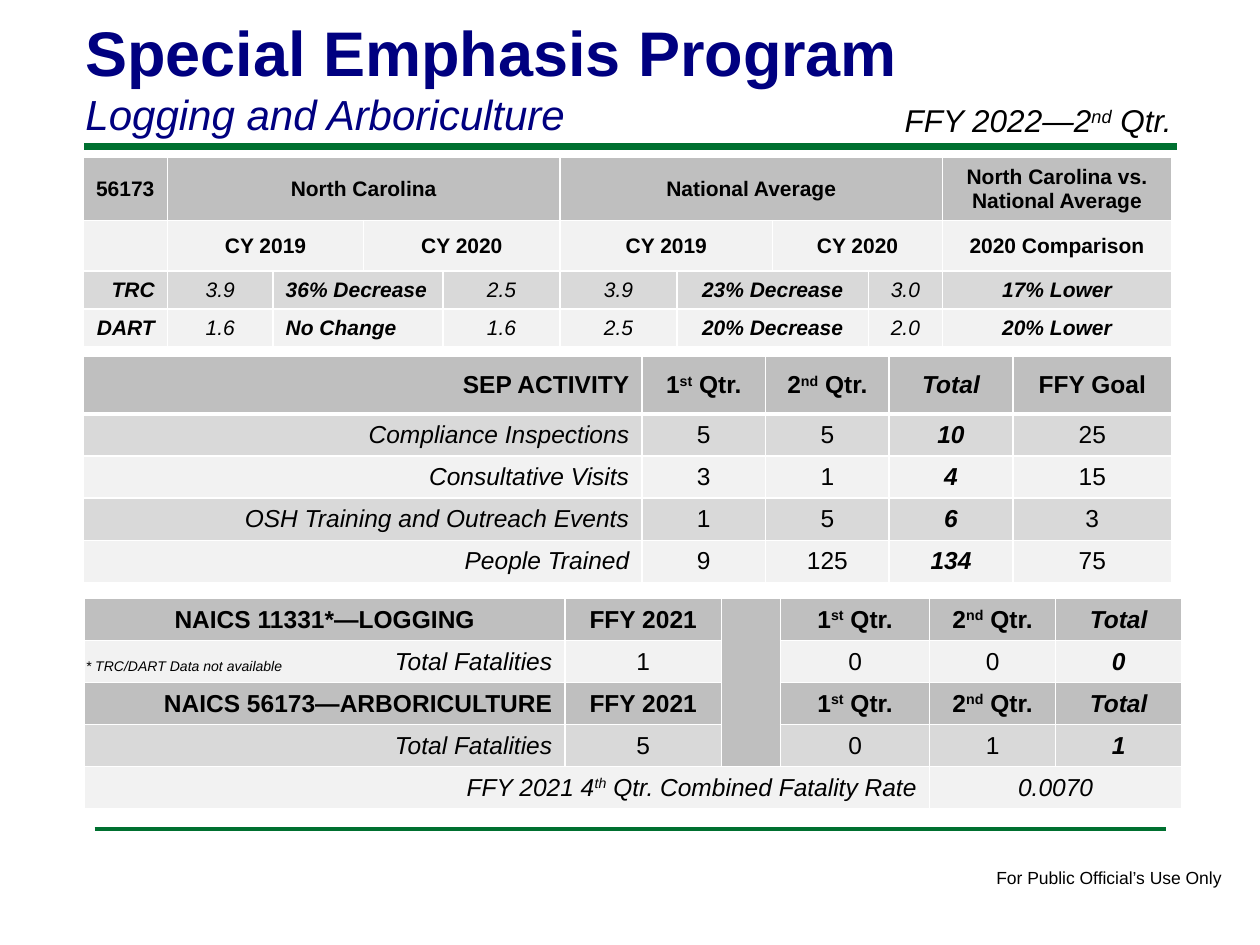
from collections import namedtuple
from lxml.etree import SubElement
from pptx import Presentation
from pptx.dml.color import RGBColor
from pptx.enum.shapes import MSO_CONNECTOR as Connector
from pptx.enum.text import MSO_ANCHOR as Anchor, PP_ALIGN as Align
from pptx.oxml.ns import qn
from pptx.util import Inches, Pt

Box = namedtuple("Box", "left top width height")
Entry = namedtuple("Entry", "text style down across", defaults=("", "c", 1, 1))
WIDTH, HEIGHT = Inches(10), Inches(7.5)
FONT = "Arial"
BLACK, WHITE, NAVY, GREEN = "000000", "FFFFFF", "000080", "007030"
HEAD, DARK, LIGHT = "BFBFBF", "D9D9D9", "F2F2F2"
ALIGNMENTS = {"l": Align.LEFT, "c": Align.CENTER, "r": Align.RIGHT}
QUARTERS = ("1^st^ Qtr.", "2^nd^ Qtr.")


def color(value):
    return RGBColor.from_string(value)


def percent_box(left, top, width, height):
    return Box(*(int(share * side / 100) for share, side in
                 zip((left, top, width, height), (WIDTH, HEIGHT) * 2)))


def inside(box, left, top, width, height):
    return Box(int(box.left + box.width * left), int(box.top + box.height * top),
               int(box.width * width), int(box.height * height))


def write(paragraph, text, style, size, ink=BLACK):
    paragraph.alignment = ALIGNMENTS[style[-1]]
    formats = {"name": FONT, "size": Pt(size), "bold": "b" in style, "italic": "i" in style}
    for index, part in enumerate(text.split("^") if text else ()):
        run = paragraph.add_run()
        run.text = part
        for name, value in formats.items():
            setattr(run.font, name, value)
        run.font.color.rgb = color(ink)
        if index % 2:
            run._r.get_or_add_rPr().set("baseline", "30000")
    if not text:
        SubElement(paragraph._p, qn("a:endParaRPr"), sz=str(size * 100))


def add_text(slide, box, lines, ink=BLACK, wrap=True, anchor=Anchor.TOP):
    frame = slide.shapes.add_textbox(*box).text_frame
    frame.word_wrap = wrap
    frame.vertical_anchor = anchor
    for index, (text, style, size) in enumerate(lines):
        paragraph = frame.add_paragraph() if index else frame.paragraphs[0]
        write(paragraph, text, style, size, ink)


def add_rule(slide, box, weight):
    line = slide.shapes.add_connector(Connector.STRAIGHT, box.left, box.top,
                                      box.left + box.width, box.top)
    line.line.color.rgb = color(GREEN)
    line.line.width = Pt(weight)
    SubElement(line._element.spPr, qn("a:effectLst"))


def set_borders(cell, bottom):
    properties = cell._tc.get_or_add_tcPr()
    weights = {"lnL": 1, "lnR": 1, "lnT": 1, "lnB": bottom}
    for position, (side, weight) in enumerate(weights.items()):
        border = SubElement(properties, qn(f"a:{side}"), w=str(Pt(weight)))
        fill = SubElement(border, qn("a:solidFill"))
        SubElement(fill, qn("a:srgbClr"), val=WHITE)
        properties.insert(position, border)


def add_grid(slide, box, columns, rows, fills, content, size, head_border=1):
    table = slide.shapes.add_table(len(rows), len(columns), *box).table
    for name in ("first_row", "horz_banding"):
        setattr(table, name, False)
    for tracks, shares, name, length in ((table.columns, columns, "width", box.width),
                                         (table.rows, rows, "height", box.height)):
        for track, share in zip(tracks, shares):
            setattr(track, name, int(length * share / sum(shares)))
    for row, fill in enumerate(fills):
        for column in range(len(columns)):
            cell = table.cell(row, column)
            entry = content.get((row, column), Entry())
            cell.fill.solid()
            cell.fill.fore_color.rgb = color(HEAD if entry.down > 1 else fill)
            set_borders(cell, 1 if row else head_border)
            cell.vertical_anchor = Anchor.MIDDLE
            write(cell.text_frame.paragraphs[0], entry.text, entry.style, size)
            if entry.down * entry.across > 1:
                cell.merge(table.cell(row + entry.down - 1, column + entry.across - 1))


def add_header(slide, box):
    add_text(slide, inside(box, 0, 0, 0.92, 0.93),
             [("Special Emphasis Program", "bl", 36), ("Logging and Arboriculture", "il", 24)],
             NAVY, anchor=Anchor.BOTTOM)
    add_text(slide, inside(box, 0.72, 0.59, 0.28, 0.34), [("FFY 2022—2^nd^ Qtr.", "il", 18)])
    add_rule(slide, inside(box, 0.01, 0.94, 0.96, 0), 4)


def add_rates(slide, box):
    content = {
        (0, 0): Entry("56173", "bc"),
        (0, 1): Entry("North Carolina", "bc", 1, 4),
        (0, 5): Entry("National Average", "bc", 1, 4),
        (0, 9): Entry("North Carolina vs. National Average", "bc"),
        (1, 9): Entry("2020 Comparison", "bc"),
    }
    for column, year in zip((1, 3, 5, 7), (2019, 2020) * 2):
        content[1, column] = Entry(f"CY {year}", "bc", 1, 2)
    measures = (
        ("TRC", "3.9", "36% Decrease", "2.5", "3.9", "23% Decrease", "3.0", "17% Lower"),
        ("DART", "1.6", "No Change", "1.6", "2.5", "20% Decrease", "2.0", "20% Lower"),
    )
    layout = ((0, "bir", 1), (1, "ic", 1), (2, "bil", 2), (4, "ic", 1),
              (5, "ic", 1), (6, "bic", 2), (8, "ic", 1), (9, "bic", 1))
    for row, values in enumerate(measures, 2):
        for text, (column, style, across) in zip(values, layout):
            content[row, column] = Entry(text, style, 1, across)
    add_grid(slide, box, (0.67, 0.84, 0.72, 0.63, 0.93, 0.93, 0.76, 0.76, 0.59, 1.82),
             (5, 4, 3, 3), (HEAD, LIGHT, DARK, LIGHT), content, 12)


def add_activity(slide, box):
    rows = (
        ("SEP ACTIVITY", *QUARTERS, "Total", "FFY Goal"),
        ("Compliance Inspections", "5", "5", "10", "25"),
        ("Consultative Visits", "3", "1", "4", "15"),
        ("OSH Training and Outreach Events", "1", "5", "6", "3"),
        ("People Trained", "9", "125", "134", "75"),
    )
    head, body = ("br", "bc", "bc", "bic", "bc"), ("ir", "c", "c", "bic", "c")
    content = {(row, column): Entry(text, (body if row else head)[column])
               for row, values in enumerate(rows) for column, text in enumerate(values)}
    add_grid(slide, box, (4.43, 0.98, 0.98, 0.98, 1.26), (0.45,) + (0.33,) * 4,
             (HEAD, DARK, LIGHT, DARK, LIGHT), content, 14, head_border=3)


def add_fatalities(slide, box):
    content = {
        (0, 2): Entry(down=4),
        (4, 0): Entry("FFY 2021 4^th^ Qtr. Combined Fatality Rate", "ir", 1, 4),
        (4, 4): Entry("0.0070", "ic", 1, 2),
    }
    industries = (
        ("NAICS 11331*—LOGGING", "bc", ("1", "0", "0", "0")),
        ("NAICS 56173—ARBORICULTURE", "br", ("5", "0", "1", "1")),
    )
    headings = ("FFY 2021", *QUARTERS, "Total")
    head, body = ("bc", "bc", "bc", "bic"), ("c", "c", "c", "bic")
    for row, (name, style, counts) in zip((0, 2), industries):
        content[row, 0] = Entry(name, style)
        content[row + 1, 0] = Entry("Total Fatalities", "ir")
        for index, column in enumerate((1, 3, 4, 5)):
            content[row, column] = Entry(headings[index], head[index])
            content[row + 1, column] = Entry(counts[index], body[index])
    add_grid(slide, box, (3.81, 1.24, 0.47, 1.18, 1, 1), (1,) * 5,
             (HEAD, LIGHT, HEAD, DARK, LIGHT), content, 14)
    add_text(slide, inside(box, -0.01, 0.25, 0.22, 0.14),
             [("* TRC/DART Data not available", "il", 8)], wrap=False)


def add_footer(slide, box):
    add_rule(slide, inside(box, 0, 0, 0.94, 0), 2)
    add_text(slide, inside(box, 0.78, 0.48, 0.23, 0.52),
             [("For Public Official’s Use Only", "l", 10)], wrap=False)


def main():
    presentation = Presentation()
    presentation.slide_width, presentation.slide_height = WIDTH, HEIGHT
    slide = presentation.slides.add_slide(presentation.slide_layouts[6])
    add_header(slide, percent_box(5.8, 0.8, 90.3, 15.7))
    add_rates(slide, percent_box(6.6, 16.67, 86.4, 20))
    add_activity(slide, percent_box(6.6, 37.75, 86.4, 23.87))
    add_fatalities(slide, percent_box(6.7, 63.33, 87.1, 22.27))
    add_footer(slide, percent_box(7.5, 87.75, 90.5, 6.93))
    presentation.save("out.pptx")


if __name__ == "__main__":
    main()
